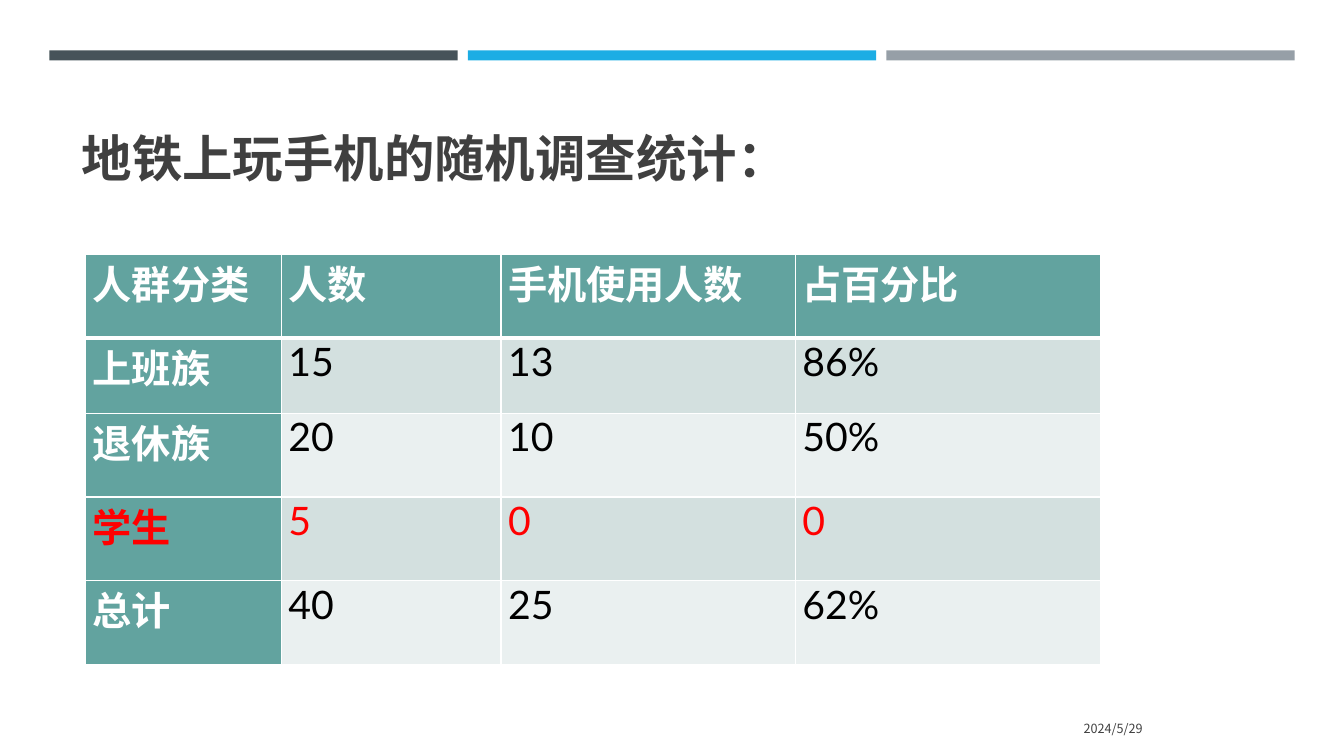
from lxml.etree import SubElement
from pptx import Presentation
from pptx.dml.color import RGBColor
from pptx.enum.shapes import MSO_SHAPE
from pptx.enum.text import MSO_ANCHOR, PP_ALIGN
from pptx.oxml import parse_xml
from pptx.oxml.ns import nsdecls, qn
from pptx.util import Inches, Pt

SLATE = RGBColor(0x46, 0x53, 0x59)
BLUE = RGBColor(0x1C, 0xAD, 0xE4)
GREY = RGBColor(0x96, 0x9F, 0xA7)
DARK = RGBColor(0x40, 0x40, 0x40)
TEAL = RGBColor(0x62, 0xA3, 0x9F)
BAND = RGBColor(0xD3, 0xE0, 0xDF)
PALE = RGBColor(0xEA, 0xF0, 0xF0)
WHITE = RGBColor(0xFF, 0xFF, 0xFF)
BLACK = RGBColor(0, 0, 0)
RED = RGBColor(0xFF, 0, 0)
CJK = "Noto Sans CJK SC"

ROWS = [
    ["人群分类", "人数", "手机使用人数", "占百分比"],
    ["上班族", "15", "13", "86%"],
    ["退休族", "20", "10", "50%"],
    ["学生", "5", "0", "0"],
    ["总计", "40", "25", "62%"],
]
COL_WIDTHS = [1.94, 2.18, 2.92, 3.03]
ROW_HEIGHTS = [0.83, 0.75, 0.83, 0.83, 0.83]


def add_text(p, text, size, color, bold=False, latin=CJK):
    r = p.add_run()
    r.text = text
    r.font.size = Pt(size)
    r.font.bold = bold
    r.font.color.rgb = color
    r.font.name = latin
    SubElement(r.font._element, qn("a:ea"), typeface=CJK)


def set_borders(cell, top, bottom):
    """Draw white cell edges, 1 pt at the sides; top and bottom are in points."""
    tcPr = cell._tc.get_or_add_tcPr()
    edges = [("lnL", 1), ("lnR", 1), ("lnT", top), ("lnB", bottom)]
    for i, (tag, width) in enumerate(edges):
        tcPr.insert(i, parse_xml(
            f'<a:{tag} {nsdecls("a")} w="{Pt(width)}"><a:solidFill>'
            f'<a:srgbClr val="{WHITE}"/></a:solidFill></a:{tag}>'))


prs = Presentation()
prs.slide_width = Inches(13.33)
prs.slide_height = Inches(7.5)
s = prs.slides.add_slide(prs.slide_layouts[5])

for i, color in enumerate([SLATE, BLUE, GREY]):
    bar = s.shapes.add_shape(MSO_SHAPE.RECTANGLE, Inches(0.49 + 4.15 * i),
                             Inches(0.5), Inches(4.05), Inches(0.1))
    bar.fill.solid()
    bar.fill.fore_color.rgb = color
    bar.line.fill.background()
    bar.shadow.inherit = False

title = s.shapes.title
title.left, title.top = Inches(0.71), Inches(0.61)
title.width, title.height = Inches(12.06), Inches(1.3)
tf = title.text_frame
tf.vertical_anchor = MSO_ANCHOR.BOTTOM
tf.paragraphs[0].alignment = PP_ALIGN.LEFT
add_text(tf.paragraphs[0], "地铁上玩手机的随机调查统计：", 36, DARK, bold=True)

table = s.shapes.add_table(len(ROWS), len(COL_WIDTHS), Inches(0.85), Inches(2.52),
                           Inches(sum(COL_WIDTHS)), Inches(sum(ROW_HEIGHTS))).table
for col, width in zip(table.columns, COL_WIDTHS):
    col.width = Inches(width)
for i, (height, texts) in enumerate(zip(ROW_HEIGHTS, ROWS)):
    table.rows[i].height = Inches(height)
    for j, text in enumerate(texts):
        cell = table.cell(i, j)
        heading = i == 0 or j == 0
        cell.fill.solid()
        cell.fill.fore_color.rgb = TEAL if heading else BAND if i % 2 else PALE
        cell.margin_left = cell.margin_right = Inches(0.07)
        cell.margin_top = cell.margin_bottom = 0
        set_borders(cell, top=3 if i == 1 else 1, bottom=3 if i == 0 else 1)
        p = cell.text_frame.paragraphs[0]
        p.alignment = PP_ALIGN.JUSTIFY
        color = RED if texts[0] == "学生" else WHITE if heading else BLACK
        add_text(p, text, 28, color, bold=heading, latin="Lato")

date = s.shapes.add_textbox(Inches(8.32), Inches(7.03), Inches(3.11), Inches(0.4))
tf = date.text_frame
tf.word_wrap = True
tf.vertical_anchor = MSO_ANCHOR.MIDDLE
tf.paragraphs[0].alignment = PP_ALIGN.RIGHT
add_text(tf.paragraphs[0], "2024/5/29", 9, DARK)

prs.save("out.pptx")
